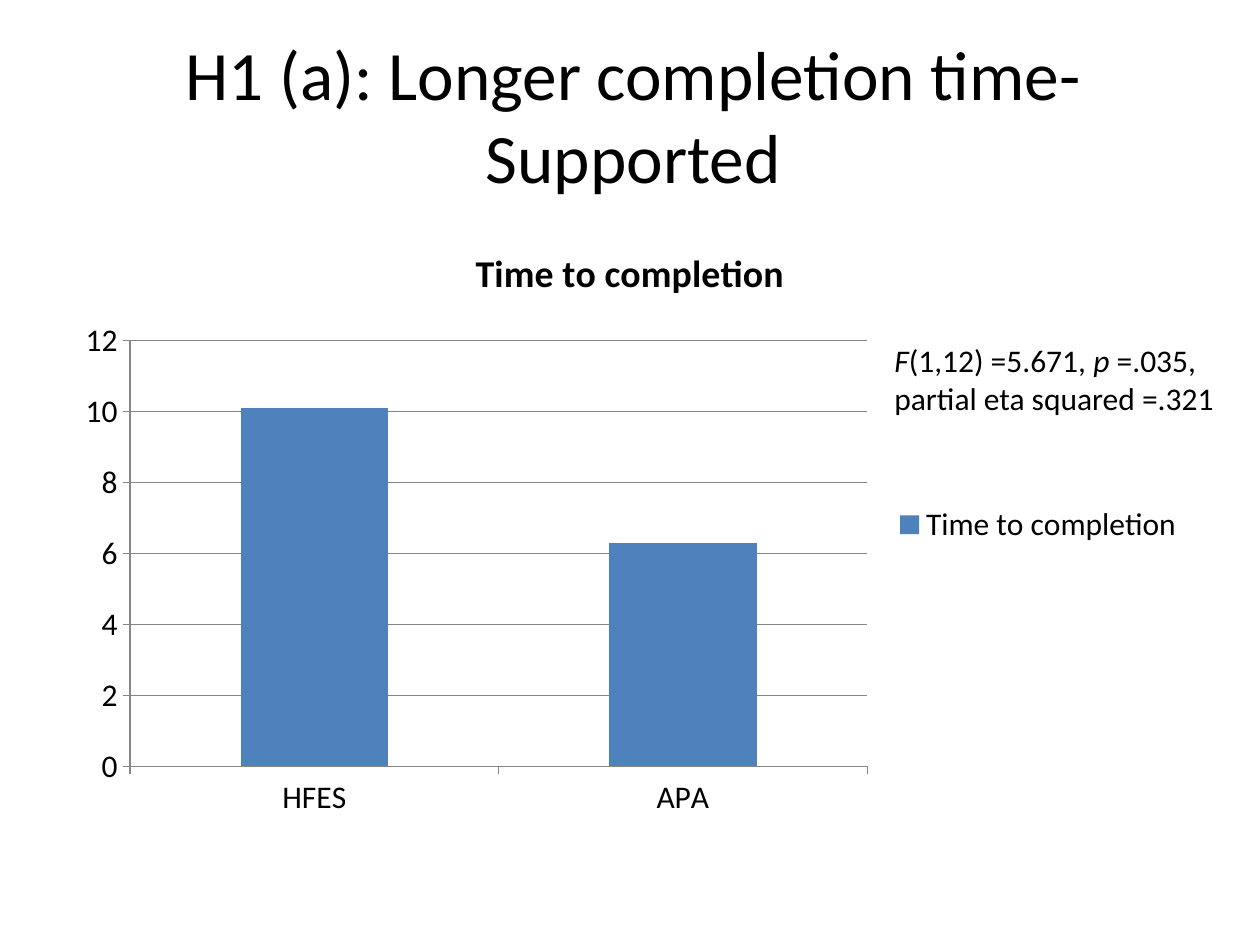
"""Build the slide on hypothesis H1 (a), completion time."""
from pptx import Presentation
from pptx.chart import data
from pptx.dml.color import RGBColor
from pptx.enum import chart as ch, text
from pptx.util import Inches, Pt

BLACK = RGBColor(0x00, 0x00, 0x00)
BLUE = RGBColor(0x4F, 0x81, 0xBD)
GRAY = RGBColor(0x86, 0x86, 0x86)
FONT = "Calibri"


def style(font, size, bold=False, italic=False):
    font.name = FONT
    font.size = Pt(size)
    font.bold = bold
    font.italic = italic
    font.color.rgb = BLACK


deck = Presentation()
deck.slide_width = Inches(10)
deck.slide_height = Inches(7.5)
slide = deck.slides.add_slide(deck.slide_layouts[6])

heading = slide.shapes.add_textbox(Inches(0.55), Inches(0.33), Inches(8.95), Inches(1.15)).text_frame
heading.word_wrap = True
heading.vertical_anchor = text.MSO_ANCHOR.MIDDLE
heading.paragraphs[0].alignment = text.PP_ALIGN.CENTER
hypothesis = heading.paragraphs[0].add_run()
hypothesis.text = "H1 (a): Longer completion time-Supported"
style(hypothesis.font, 39.6)

times = data.CategoryChartData()
times.categories = ["HFES", "APA"]
times.add_series("Time to completion", [10.1, 6.3])
completion = slide.shapes.add_chart(
    ch.XL_CHART_TYPE.COLUMN_CLUSTERED,
    Inches(0.5), Inches(1.75), Inches(9), Inches(4.83), times,
).chart
style(completion.font, 18)

completion.has_title = True
caption = completion.chart_title.text_frame.paragraphs[0].add_run()
caption.text = "Time to completion"
style(caption.font, 21.6, bold=True)
completion.chart_title.include_in_layout = False

completion.has_legend = True
completion.legend.position = ch.XL_LEGEND_POSITION.RIGHT
completion.legend.include_in_layout = False
style(completion.legend.font, 18)

for axis in (completion.category_axis, completion.value_axis):
    axis.major_tick_mark = ch.XL_TICK_MARK.OUTSIDE
    axis.minor_tick_mark = ch.XL_TICK_MARK.NONE
    axis.format.line.color.rgb = GRAY
    axis.format.line.width = Pt(0.75)
    style(axis.tick_labels.font, 18)

scale = completion.value_axis
scale.minimum_scale = 0
scale.maximum_scale = 12
scale.major_unit = 2
scale.tick_labels.number_format = "General"
scale.tick_labels.number_format_is_linked = False
scale.has_major_gridlines = True
scale.major_gridlines.format.line.color.rgb = GRAY
scale.major_gridlines.format.line.width = Pt(0.75)

columns = completion.plots[0]
columns.gap_width = 150
columns.vary_by_categories = False
columns.series[0].format.fill.solid()
columns.series[0].format.fill.fore_color.rgb = BLUE

statistics = slide.shapes.add_textbox(Inches(7), Inches(2.66), Inches(2.75), Inches(1.01)).text_frame
statistics.word_wrap = True
for words, italic in (
    ("F", True),
    ("(1,12) =5.671, ", False),
    ("p", True),
    (" =.035, partial eta squared =.321", False),
):
    part = statistics.paragraphs[0].add_run()
    part.text = words
    style(part.font, 18, italic=italic)

deck.save("out.pptx")
